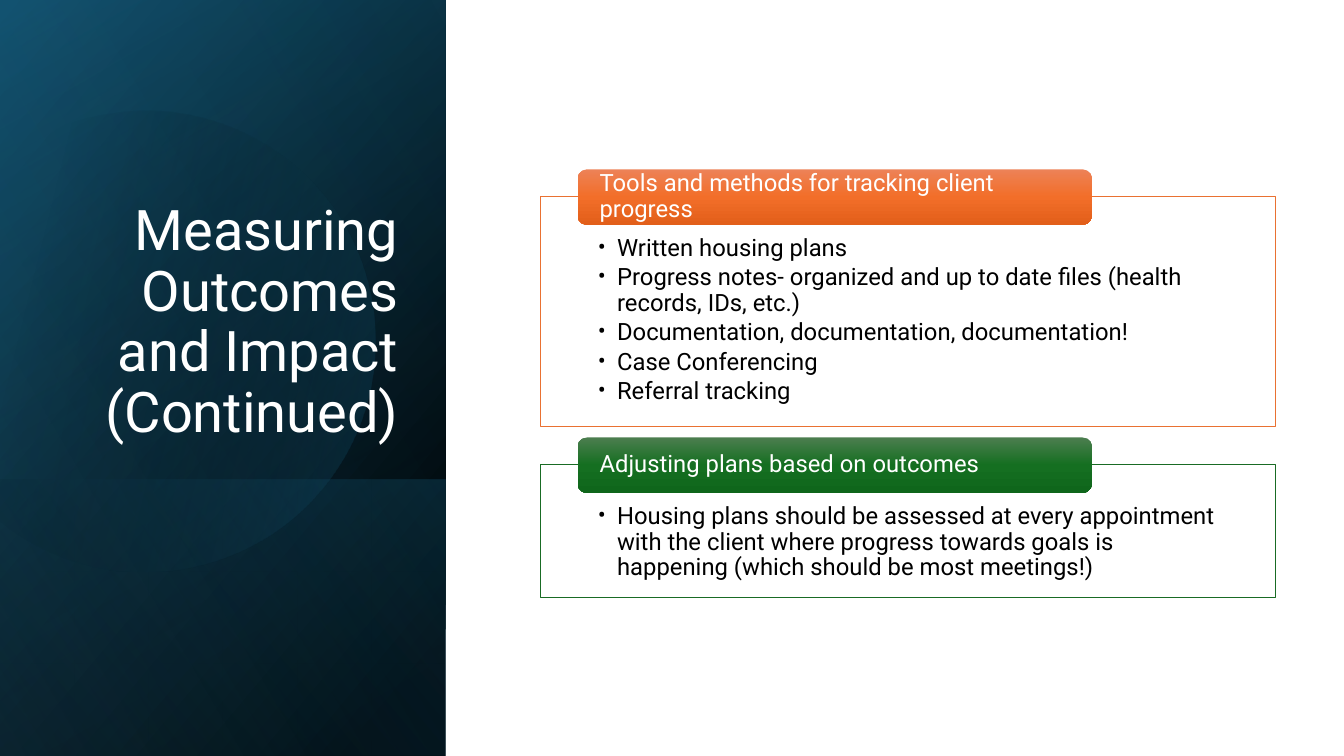
"""Build the slide on measuring outcomes: a dark title panel and two labelled lists."""
from dataclasses import dataclass
from math import cos, radians, sin

from lxml import etree
from pptx import Presentation
from pptx.dml.color import RGBColor
from pptx.enum.shapes import MSO_SHAPE
from pptx.enum.text import MSO_ANCHOR, MSO_AUTO_SIZE, PP_ALIGN
from pptx.oxml.ns import qn
from pptx.util import Inches, Pt

RECTANGLE, ROUNDED = MSO_SHAPE.RECTANGLE, MSO_SHAPE.ROUNDED_RECTANGLE
TOP, MIDDLE, BOTTOM = MSO_ANCHOR.TOP, MSO_ANCHOR.MIDDLE, MSO_ANCHOR.BOTTOM
LEFT, RIGHT = PP_ALIGN.LEFT, PP_ALIGN.RIGHT
NO_AUTOFIT = MSO_AUTO_SIZE.NONE


@dataclass(frozen=True)
class Theme:
    font: str = "Roboto"
    title_size: int = 40
    body_size: int = 17
    white: str = "FFFFFF"
    black: str = "000000"
    blue: str = "156082"
    deep_blue: str = "104862"
    sky: str = "46B1E1"
    orange: str = "E97132"
    green: str = "196B24"
    orange_shades: tuple = ("ED8257", "F26E29", "E25F1A")
    green_shades: tuple = ("4D7E50", "156F21", "0F661B")


theme = Theme()


def paint_gradient(shape, stops, angle):
    """Fill a shape with (position, colour, opacity) stops, without line or shadow."""
    shape.shadow.inherit = False
    shape.line.fill.background()
    shape.fill.gradient()
    gradient = shape._element.spPr.find(qn("a:gradFill"))
    gradient.set("rotWithShape", "1")
    stop_list = gradient.find(qn("a:gsLst"))
    for old_stop in list(stop_list):
        stop_list.remove(old_stop)
    for position, color, opacity in stops:
        stop = etree.SubElement(stop_list, qn("a:gs"), pos=str(position * 1000))
        tint = etree.SubElement(stop, qn("a:srgbClr"), val=color)
        if opacity < 100:
            etree.SubElement(tint, qn("a:alpha"), val=str(opacity * 1000))
    gradient.find(qn("a:lin")).set("ang", str(angle * 60000))


def write_text(frame, lines, frame_format, paragraph_format, size, color, bullet=False):
    """Write the lines into a text frame and format them."""
    for name, value in frame_format.items():
        setattr(frame, name, value)
    for index, line in enumerate(lines):
        paragraph = frame.paragraphs[0] if index == 0 else frame.add_paragraph()
        paragraph.text = line
        if bullet:
            properties = paragraph._p.get_or_add_pPr()
            properties.set("marL", str(Inches(0.19)))
            properties.set("indent", str(Inches(-0.19)))
            etree.SubElement(properties, qn("a:buFont"), typeface=theme.font)
            etree.SubElement(properties, qn("a:buChar"), char="•")
        for name, value in paragraph_format.items():
            setattr(paragraph, name, value)
        for name, value in {"name": theme.font, "size": Pt(size)}.items():
            setattr(paragraph.font, name, value)
        paragraph.font.color.rgb = RGBColor.from_string(color)


presentation = Presentation()
presentation.slide_width, presentation.slide_height = Inches(13.33), Inches(7.5)
slide = presentation.slides.add_slide(presentation.slide_layouts[5])
shapes = slide.shapes

panel_box = (-1.54, 1.54, 7.5, 4.42)
panel_layers = [
    (panel_box, [(8, theme.black, 100), (100, theme.deep_blue, 100)], 50),
    (panel_box, [(0, theme.black, 0), (99, theme.blue, 46)], 30),
    ((0.84, 3.92, 2.74, 4.42), [(2, theme.blue, 29), (100, theme.black, 30)], 130),
    (panel_box, [(0, theme.black, 0), (99, theme.sky, 11)], 120),
]
disc_left, disc_top, disc_width, disc_height = -0.55, 1.06, 4.27, 4.57
disc_tilt = -16.1
disc_outline = [
    ("moveTo", [(1.49, 1.1)]),
    ("cubicBezTo", [(2.46, 1.12), (3.35, 1.77), (3.63, 2.75)]),
    ("cubicBezTo", [(3.98, 3.97), (3.28, 5.23), (2.07, 5.58)]),
    ("cubicBezTo", [(1.31, 5.8), (0.53, 5.61), (-0.03, 5.14)]),
    ("lnTo", [(-0.15, 5.03)]),
    ("lnTo", [(-0.15, 1.75)]),
    ("lnTo", [(0, 1.61)]),
    ("cubicBezTo", [(0.23, 1.42), (0.5, 1.28), (0.8, 1.19)]),
    ("cubicBezTo", [(1.03, 1.13), (1.26, 1.1), (1.49, 1.1)]),
    ("close", []),
]
for layer_index, (box, stops, angle) in enumerate(panel_layers):
    if layer_index == 3:
        right, bottom = disc_left + disc_width, disc_top + disc_height
        frame_corners = [(right, disc_top), (right, bottom), (disc_left, bottom)]
        builder = shapes.build_freeform(Inches(disc_left), Inches(disc_top))
        builder.add_line_segments([tuple(map(Inches, corner)) for corner in frame_corners])
        disc = builder.convert_to_shape()
        disc.rotation = disc_tilt
        route = disc._element.spPr.find(".//" + qn("a:path"))
        for corner in list(route):
            route.remove(corner)
        turn = radians(-disc_tilt)
        for command, points in disc_outline:
            segment = etree.SubElement(route, qn("a:" + command))
            for x, y in points:
                across = x - disc_left - disc_width / 2
                down = y - disc_top - disc_height / 2
                local_x = across * cos(turn) - down * sin(turn) + disc_width / 2
                local_y = across * sin(turn) + down * cos(turn) + disc_height / 2
                etree.SubElement(segment, qn("a:pt"),
                                 x=str(Inches(local_x)), y=str(Inches(local_y)))
        paint_gradient(disc, [(29, theme.black, 0), (100, theme.blue, 43)], 30)
    layer = shapes.add_shape(RECTANGLE, *map(Inches, box))
    layer.rotation = 90
    layer._element.spPr.find(qn("a:xfrm")).set("flipH", "1")
    paint_gradient(layer, stops, angle)

title = shapes.title
title_place = {"left": 0.64, "top": 1.84, "width": 3.41, "height": 2.62}
for name, value in title_place.items():
    setattr(title, name, Inches(value))
write_text(title.text_frame, ["Measuring Outcomes and Impact (Continued)"],
           {"vertical_anchor": BOTTOM, "word_wrap": True, "auto_size": NO_AUTOFIT},
           {"alignment": RIGHT, "line_spacing": 0.9}, theme.title_size, theme.white)
shapes._spTree.append(title._element)

list_frame = {"vertical_anchor": TOP, "word_wrap": True,
              "margin_left": Inches(0.57), "margin_right": Inches(0.57),
              "margin_top": Inches(0.39), "margin_bottom": Inches(0.13)}
label_frame = {"vertical_anchor": MIDDLE, "word_wrap": True,
               "margin_left": Inches(0.19), "margin_right": Inches(0.19),
               "margin_top": 0, "margin_bottom": 0}
list_paragraph = {"level": 1, "alignment": LEFT, "line_spacing": 0.9,
                  "space_after": Pt(2.6)}
label_paragraph = {"alignment": LEFT, "line_spacing": 0.9}

sections = [
    (1.95, 2.28, theme.orange, theme.orange_shades,
     "Tools and methods for tracking client progress",
     ["Written housing plans",
      "Progress notes- organized and up to date files (health records, IDs, etc.)",
      "Documentation, documentation, documentation!",
      "Case Conferencing",
      "Referral tracking"]),
    (4.61, 1.32, theme.green, theme.green_shades,
     "Adjusting plans based on outcomes",
     ["Housing plans should be assessed at every appointment with the client where "
      "progress towards goals is happening (which should be most meetings!)"]),
]
for top, height, accent, shades, heading, items in sections:
    card = shapes.add_shape(RECTANGLE, Inches(5.36), Inches(top), Inches(7.29), Inches(height))
    card.shadow.inherit = False
    card.fill.solid()
    card.fill.fore_color.rgb = RGBColor.from_string(theme.white)
    card_tint = card._element.spPr.find(qn("a:solidFill"))[0]
    etree.SubElement(card_tint, qn("a:alpha"), val="90000")
    card.line.color.rgb = RGBColor.from_string(accent)
    card.line.width = Pt(1)
    write_text(card.text_frame, items, list_frame, list_paragraph,
               theme.body_size, theme.black, bullet=True)

    label = shapes.add_shape(ROUNDED, Inches(5.73), Inches(top - 0.27), Inches(5.1), Inches(0.55))
    paint_gradient(label, [(50 * step, shade, 100) for step, shade in enumerate(shades)], 90)
    write_text(label.text_frame, [heading], label_frame, label_paragraph,
               theme.body_size, theme.white)

presentation.save("out.pptx")
